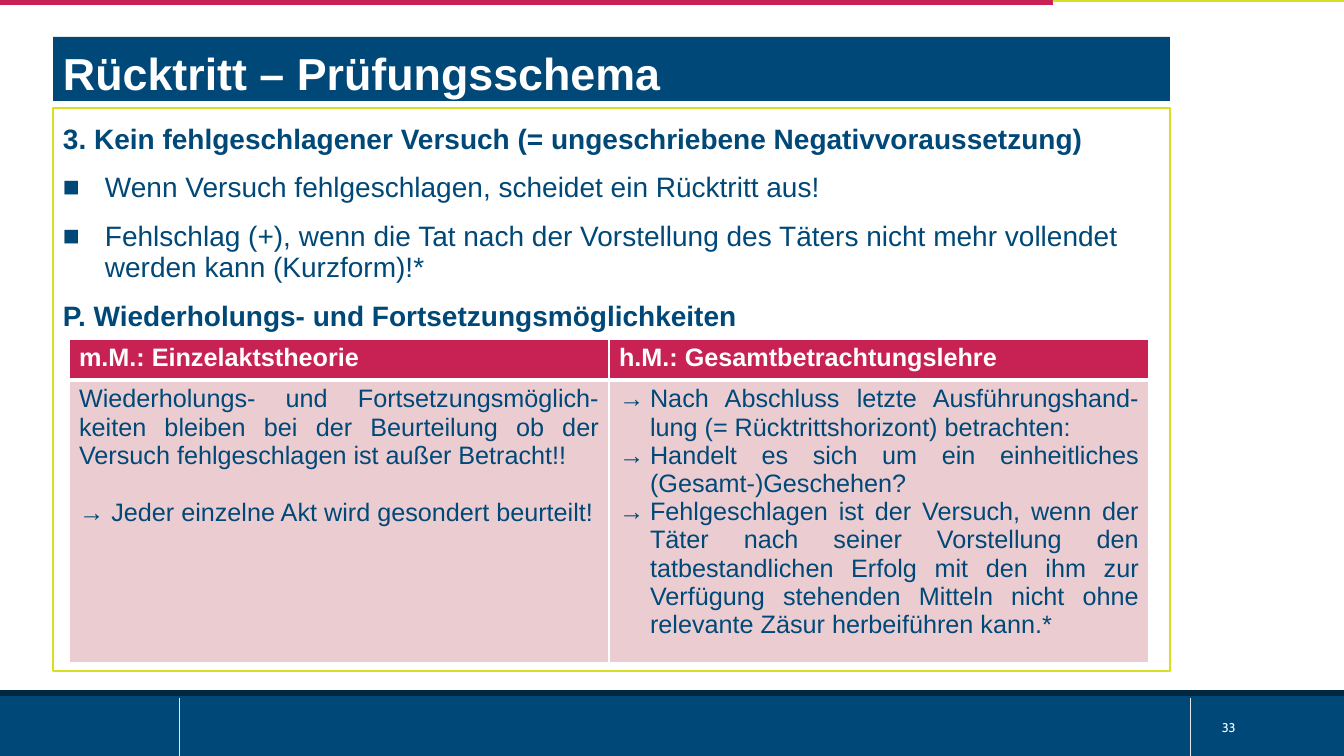
from lxml import etree
from pptx import Presentation
from pptx.dml.color import RGBColor
from pptx.enum.shapes import MSO_CONNECTOR, MSO_SHAPE
from pptx.enum.text import MSO_ANCHOR, PP_ALIGN
from pptx.oxml.ns import qn
from pptx.util import Pt

BLUE = RGBColor(0x00, 0x48, 0x77)
NAVY = RGBColor(0x01, 0x28, 0x3F)
RED = RGBColor(0xC8, 0x22, 0x54)
LIME = RGBColor(0xD7, 0xDF, 0x23)
PINK = RGBColor(0xEB, 0xCD, 0xD1)
GREY = RGBColor(0xE6, 0xE6, 0xE6)
WHITE = RGBColor(0xFF, 0xFF, 0xFF)

TITLE = "Rücktritt – Prüfungsschema"
PAGE = "33"
BODY = [
    ("3. Kein fehlgeschlagener Versuch (= ungeschriebene Negativvoraussetzung)", None),
    ("Wenn Versuch fehlgeschlagen, scheidet ein Rücktritt aus!", "■"),
    ("Fehlschlag (+), wenn die Tat nach der Vorstellung des Täters nicht mehr "
     "vollendet werden kann (Kurzform)!*", "■"),
    ("P. Wiederholungs- und Fortsetzungsmöglichkeiten", None),
]
THEORIES = [
    ("m.M.: Einzelaktstheorie", None, 20.5, [
        "Wiederholungs- und Fortsetzungsmöglich-keiten bleiben bei der Beurteilung "
        "ob der Versuch fehlgeschlagen ist außer Betracht!!",
        "→ Jeder einzelne Akt wird gesondert beurteilt!",
    ]),
    ("h.M.: Gesamtbetrachtungslehre", "→", 0, [
        "Nach Abschluss letzte Ausführungshand-lung (= Rücktrittshorizont) betrachten:",
        "Handelt es sich um ein einheitliches (Gesamt-)Geschehen?",
        "Fehlgeschlagen ist der Versuch, wenn der Täter nach seiner Vorstellung den "
        "tatbestandlichen Erfolg mit den ihm zur Verfügung stehenden Mitteln nicht "
        "ohne relevante Zäsur herbeiführen kann.*",
    ]),
]
BARS = [
    (0, 690, 1344, 66, BLUE),
    (0, 690, 1344, 6, NAVY),
    (0, 0, 1053, 5, RED),
    (1053, 0, 291, 2, LIME),
]
DIVIDERS = [179, 1190]
ROWS = [41, 282]
COL_W = 540


def px(n):
    return round(n * 914400 / 100.8)


def add_text(tf, text, size=18, color=BLUE, bold=False, font="Arial", align=PP_ALIGN.LEFT,
             bullet=None, indent=0, before=0, after=0, spacing=1.0):
    first = not tf.paragraphs[0].runs
    p = tf.paragraphs[0] if first else tf.add_paragraph()
    p.alignment = align
    p.space_before = Pt(0 if first else before)
    p.space_after = Pt(after)
    p.line_spacing = spacing
    if bullet:
        pPr = p._p.get_or_add_pPr()
        pPr.set("marL", str(px(indent)))
        pPr.set("indent", str(-px(indent)))
        etree.SubElement(pPr, qn("a:buFont")).set("typeface", font)
        etree.SubElement(pPr, qn("a:buChar")).set("char", bullet)
    r = p.add_run()
    r.text = text
    r.font.name = font
    r.font.size = Pt(size)
    r.font.bold = bold
    r.font.color.rgb = color


def add_box(s, x, y, w, h, fill, line=None):
    sp = s.shapes.add_shape(MSO_SHAPE.RECTANGLE, px(x), px(y), px(w), px(h))
    sp.shadow.inherit = False
    sp.fill.solid()
    sp.fill.fore_color.rgb = fill
    if line:
        sp.line.color.rgb = line
        sp.line.width = Pt(2)
    else:
        sp.line.fill.background()
    tf = sp.text_frame
    tf.word_wrap = True
    tf.vertical_anchor = MSO_ANCHOR.TOP
    return tf


def style_cell(cell, fill, bottom):
    cell.fill.solid()
    cell.fill.fore_color.rgb = fill
    tcPr = cell._tc.get_or_add_tcPr()
    for i, (side, width) in enumerate([("L", 1), ("R", 1), ("T", 1), ("B", bottom)]):
        ln = etree.Element(qn(f"a:ln{side}"), w=str(Pt(width)))
        solid = etree.SubElement(ln, qn("a:solidFill"))
        etree.SubElement(solid, qn("a:srgbClr")).set("val", str(WHITE))
        tcPr.insert(i, ln)


def add_theories(s):
    tbl = s.shapes.add_table(2, 2, px(69), px(339), px(2 * COL_W), px(sum(ROWS))).table
    for row, h in zip(tbl.rows, ROWS):
        row.height = px(h)
    for c, (head, bullet, before, lines) in enumerate(THEORIES):
        tbl.columns[c].width = px(COL_W)
        top, cell = tbl.cell(0, c), tbl.cell(1, c)
        style_cell(top, RED, 3)
        style_cell(cell, PINK, 1)
        add_text(top.text_frame, head, color=WHITE, bold=True)
        for line in lines:
            add_text(cell.text_frame, line, align=PP_ALIGN.JUSTIFY,
                     bullet=bullet, indent=31, before=before)


def main():
    prs = Presentation()
    prs.slide_width, prs.slide_height = px(1344), px(756)
    s = prs.slides.add_slide(prs.slide_layouts[6])

    for bar in BARS:
        add_box(s, *bar)
    for x in DIVIDERS:
        cx = s.shapes.add_connector(MSO_CONNECTOR.STRAIGHT, px(x), px(698), px(x), px(756))
        cx.line.color.rgb = GREY
        cx.line.width = Pt(0.5)
        etree.SubElement(cx._element.spPr, qn("a:effectLst"))

    tf = s.shapes.add_textbox(px(1212), px(708), px(132), px(40)).text_frame
    tf.word_wrap = True
    tf.vertical_anchor = MSO_ANCHOR.MIDDLE
    add_text(tf, PAGE, size=9, color=WHITE, font="Cabin")

    tf = add_box(s, 53, 108, 1117, 563, WHITE, LIME)
    tf.margin_top = px(16)
    for text, bullet in BODY:
        add_text(tf, text, size=20, bold=bullet is None, bullet=bullet, indent=42,
                 before=10, after=2, spacing=0.94)

    tf = add_box(s, 53, 37, 1117, 64, BLUE)
    tf.margin_top, tf.margin_bottom = px(9), 0
    add_text(tf, TITLE, size=32, color=WHITE, bold=True)

    add_theories(s)
    prs.save("out.pptx")


if __name__ == "__main__":
    main()
